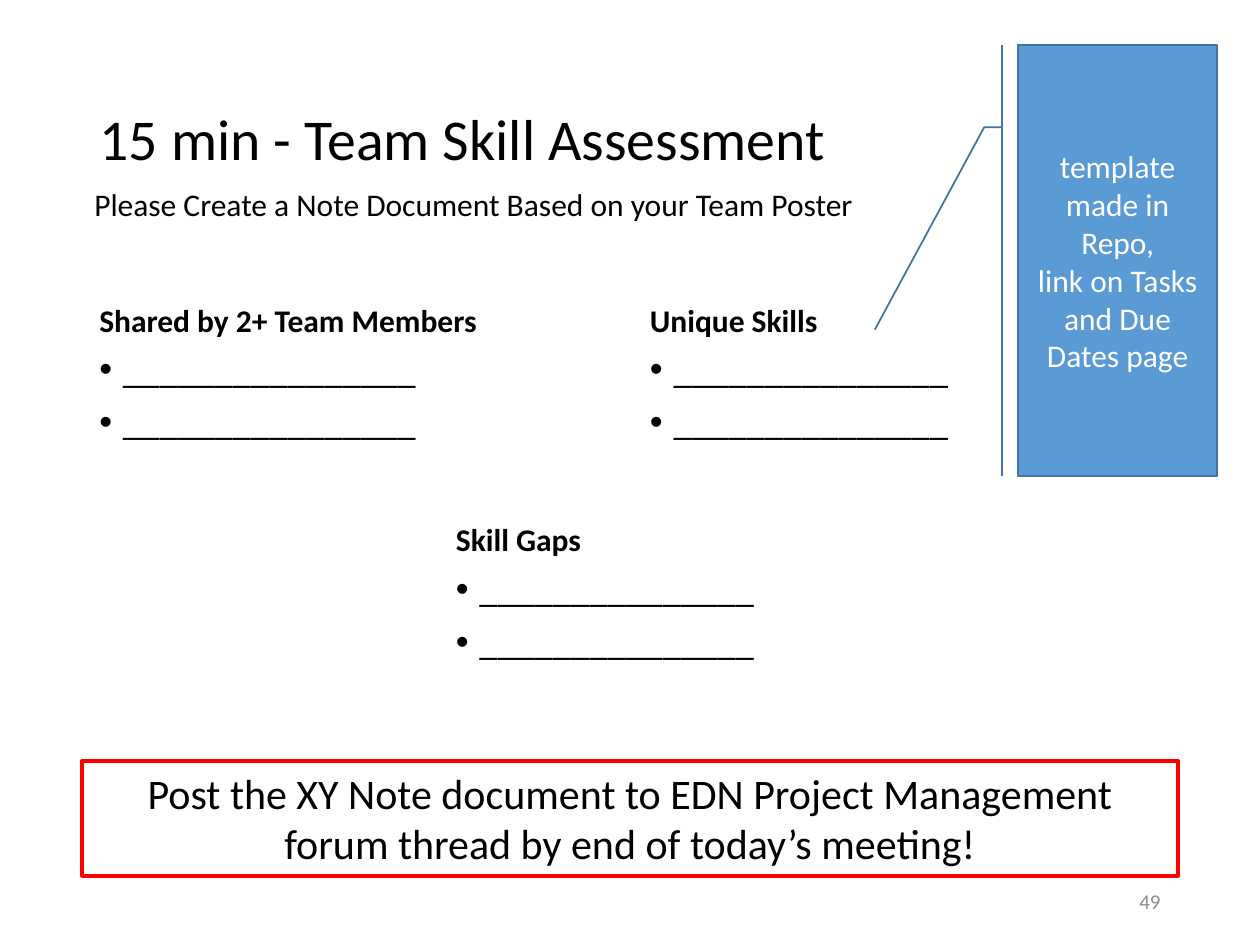
import pptx
import pptx.dml.color
import pptx.enum.shapes
import pptx.enum.text
import pptx.util
from lxml import etree

ALIGN = pptx.enum.text.PP_ALIGN
ANCHOR = pptx.enum.text.MSO_ANCHOR
SHAPE = pptx.enum.shapes.MSO_SHAPE
NAMESPACE = "http://schemas.openxmlformats.org/drawingml/2006/main"

presentation = pptx.Presentation()
presentation.slide_width = pptx.util.Inches(10)
presentation.slide_height = pptx.util.Inches(7.5)
slide = presentation.slides.add_slide(presentation.slide_layouts[5])

# Square grid: 100 columns by 75 rows
CELL = presentation.slide_width / 100


def grid(*cells):
    return [round(cell * CELL) for cell in cells]


def write(shape, lines, size, color="000000", align=ALIGN.LEFT, anchor=ANCHOR.TOP, wrap=True):
    frame = shape.text_frame
    frame.text = "\n".join(lines)
    frame.word_wrap = wrap
    frame.auto_size = pptx.enum.text.MSO_AUTO_SIZE.NONE
    frame.vertical_anchor = anchor
    for paragraph in frame.paragraphs:
        paragraph.alignment = align
        paragraph.font.name = "Calibri"
        paragraph.font.size = pptx.util.Pt(size)
        paragraph.font.color.rgb = pptx.dml.color.RGBColor.from_string(color)
    return frame.paragraphs


# Title and subtitle
title = slide.shapes.title
title.left, title.top, title.width, title.height = grid(6.9, 4, 86.2, 14.5)
write(title, ["15 min - Team Skill Assessment"], 33, anchor=ANCHOR.MIDDLE)[0].line_spacing = 0.9

subtitle = slide.shapes.add_textbox(*grid(6.5, 14.2, 66, 4))
write(subtitle, ["Please Create a Note Document Based on your Team Poster"], 18, wrap=False)

# Skill lists: the upper two have separate heading boxes, the lower one is a single box
blanks = []
for heading, left, width, blank_length in [
    ("Shared by 2+ Team Members", 6.9, 42.3, 16),
    ("Unique Skills", 50.6, 42.5, 15),
]:
    heading_box = slide.shapes.add_textbox(*grid(left, 18.4, width, 9))
    heading_paragraph = write(heading_box, [heading], 18, anchor=ANCHOR.BOTTOM)[0]
    heading_paragraph.font.bold = True
    heading_paragraph.line_spacing = 0.9
    heading_paragraph.space_before = pptx.util.Pt(7.5)
    list_box = slide.shapes.add_textbox(*grid(left, 27.4, width, 40.3))
    blanks.extend(write(list_box, ["_" * blank_length] * 2, 21))

gaps_box = slide.shapes.add_textbox(*grid(35.2, 40.8, 26, 12.6))
gaps_heading, *gaps_blanks = write(gaps_box, ["Skill Gaps"] + ["_" * 15] * 2, 21, wrap=False)
gaps_heading.font.size = pptx.util.Pt(18)
gaps_heading.font.bold = True
blanks.extend(gaps_blanks)

for paragraph in blanks:
    paragraph.line_spacing = 0.9
    paragraph.space_before = pptx.util.Pt(7.5)
    properties = paragraph._p.get_or_add_pPr()
    indent = pptx.util.Pt(13.5)
    properties.set("marL", str(indent))
    properties.set("indent", str(-indent))
    bullet_font = etree.Element(f"{{{NAMESPACE}}}buFont", typeface="Arial")
    bullet = etree.Element(f"{{{NAMESPACE}}}buChar", char="•")
    # Bullets belong after the spacing and before the default run properties
    default_run = properties.find(f"{{{NAMESPACE}}}defRPr")
    default_run.addprevious(bullet_font)
    default_run.addprevious(bullet)

# Slide number
number_box = slide.shapes.add_textbox(*grid(70.6, 69.5, 22.5, 4))
write(number_box, ["49"], 12, "8C8C8C", ALIGN.RIGHT, ANCHOR.MIDDLE)

# Instruction banner
banner = slide.shapes.add_shape(SHAPE.RECTANGLE, *grid(6.5, 60.4, 87, 9.1))
banner.shadow.inherit = False
banner.fill.background()
banner.line.color.rgb = pptx.dml.color.RGBColor.from_string("FF0000")
banner.line.width = pptx.util.Pt(2.25)
write(
    banner,
    ["Post the XY Note document to EDN Project Management forum thread by end of today’s meeting!"],
    24,
    align=ALIGN.CENTER,
)

# Callout pointing at the skill lists
callout = slide.shapes.add_shape(
    SHAPE.LINE_CALLOUT_2_BORDER_AND_ACCENT_BAR, *grid(80.8, 3.6, 15.8, 34.2)
)
for index, share in enumerate([0.19, -0.08, 0.19, -0.17, 0.66, -0.72]):
    callout.adjustments[index] = share
callout.shadow.inherit = False
callout.fill.solid()
callout.fill.fore_color.rgb = pptx.dml.color.RGBColor.from_string("5B9BD5")
callout.line.color.rgb = pptx.dml.color.RGBColor.from_string("43739E")
callout.line.width = pptx.util.Pt(1)
write(
    callout,
    ["template made in Repo,", "link on Tasks and Due Dates page"],
    18,
    "FFFFFF",
    ALIGN.CENTER,
    ANCHOR.MIDDLE,
)

presentation.save("out.pptx")
